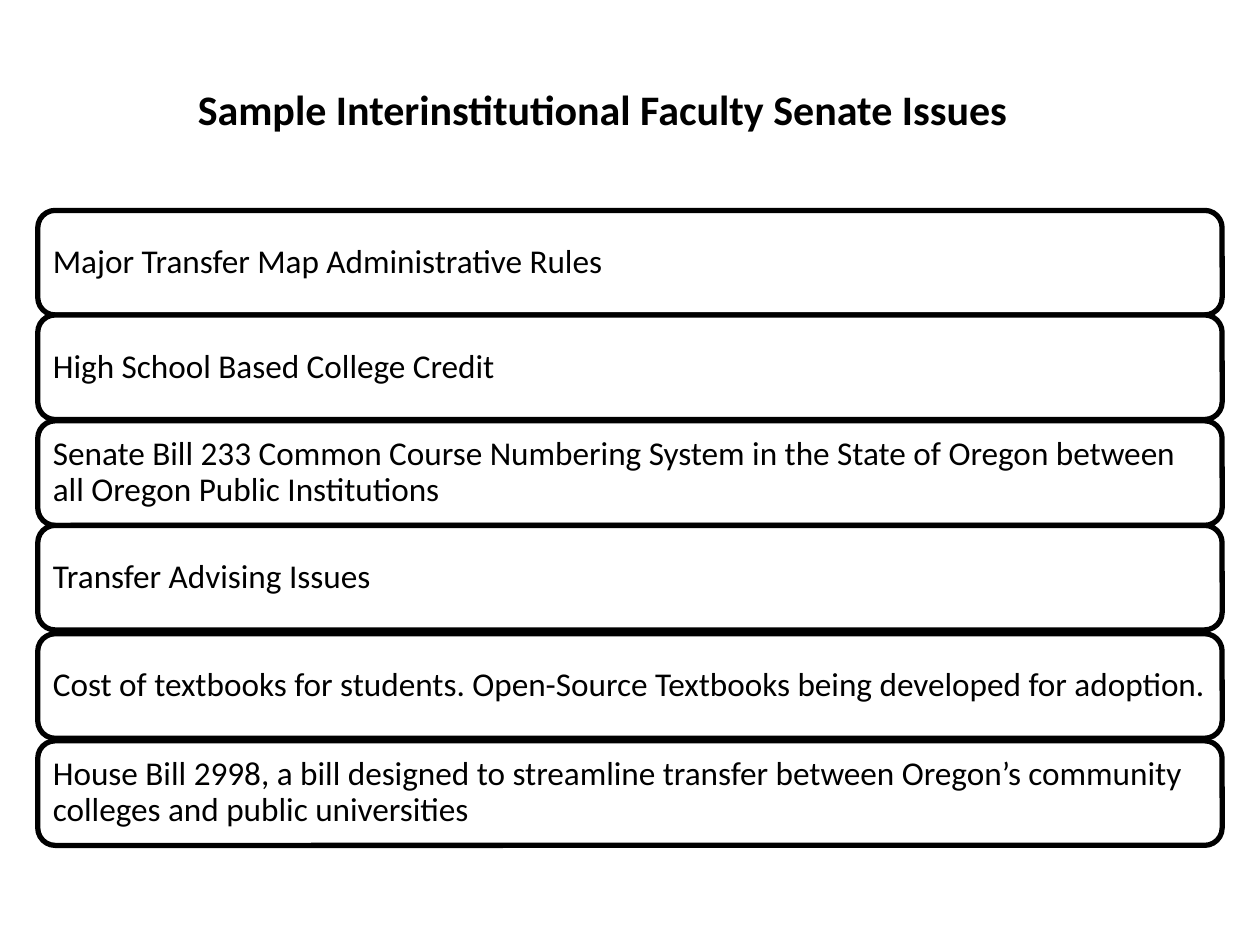
"""Build a slide that lists sample faculty senate issues in stacked boxes."""
from dataclasses import dataclass

from pptx import Presentation
from pptx.dml.color import RGBColor
from pptx.enum.shapes import MSO_SHAPE
from pptx.enum.text import MSO_ANCHOR, PP_ALIGN
from pptx.util import Inches, Pt

ROUND = MSO_SHAPE.ROUNDED_RECTANGLE
MIDDLE = MSO_ANCHOR.MIDDLE
LEFT = PP_ALIGN.LEFT


@dataclass(frozen=True)
class Theme:
    font: str = "Calibri"
    ink: RGBColor = RGBColor(0, 0, 0)
    paper: RGBColor = RGBColor(255, 255, 255)
    title: Pt = Pt(24)
    body: Pt = Pt(19)
    line: Pt = Pt(3)


theme = Theme()
issues = [
    (1.67, "Major Transfer Map Administrative Rules"),
    (2.5, "High School Based College Credit"),
    (3.34, "Senate Bill 233 Common Course Numbering System in the State of Oregon "
           "between all Oregon Public Institutions"),
    (4.17, "Transfer Advising Issues"),
    (5.03, "Cost of textbooks for students. Open-Source Textbooks being developed "
           "for adoption."),
    (5.88, "House Bill 2998, a bill designed to streamline transfer between "
           "Oregon’s community colleges and public universities"),
]


def write(shape, text, size, pad, bold=False):
    frame = shape.text_frame
    frame.word_wrap = True
    frame.vertical_anchor = MIDDLE
    frame.margin_left = frame.margin_right = Inches(pad)
    frame.margin_top = frame.margin_bottom = Inches(pad)
    para = frame.paragraphs[0]
    para.text = text
    para.alignment = LEFT
    para.font.name = theme.font
    para.font.size = size
    para.font.bold = bold
    para.font.color.rgb = theme.ink
    return para


prs = Presentation()
prs.slide_width = Inches(10)
prs.slide_height = Inches(7.5)
slide = prs.slides.add_slide(prs.slide_layouts[6])

title = slide.shapes.add_textbox(Inches(1.33), Inches(0.65), Inches(7.33), Inches(0.42))
write(title, "Sample Interinstitutional Faculty Senate Issues", theme.title, 0, bold=True)
title.text_frame.margin_left = Inches(0.24)
title.text_frame.margin_top = Inches(0.01)

for top, text in issues:
    box = slide.shapes.add_shape(ROUND, Inches(0.3), Inches(top), Inches(9.4), Inches(0.83))
    box.shadow.inherit = False
    box.fill.solid()
    box.fill.fore_color.rgb = theme.paper
    box.line.color.rgb = theme.ink
    box.line.width = theme.line
    para = write(box, text, theme.body, 0.08)
    para.line_spacing = 0.9

prs.save("out.pptx")
